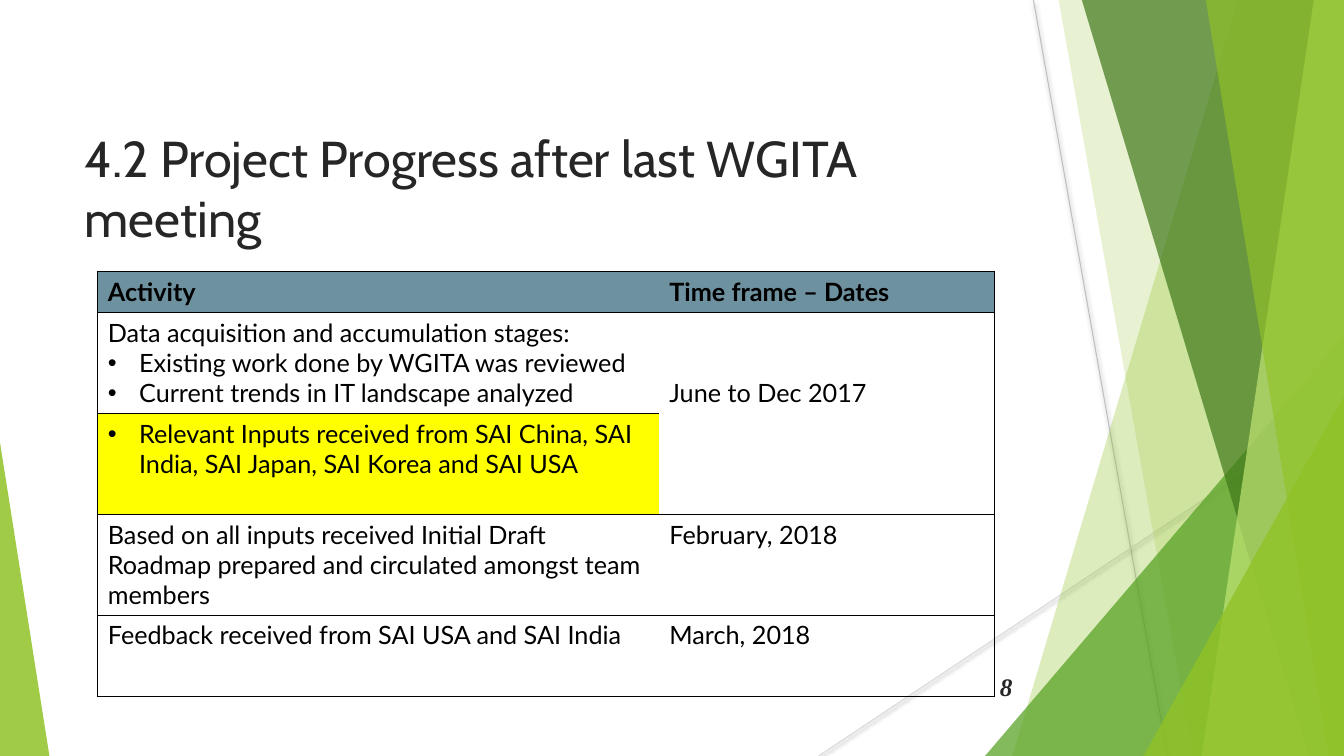
from dataclasses import dataclass
from typing import Optional

from lxml import etree
from pptx import Presentation
from pptx.dml.color import RGBColor
from pptx.enum.shapes import MSO_CONNECTOR, MSO_SHAPE
from pptx.enum.text import MSO_ANCHOR, PP_ALIGN
from pptx.oxml.ns import qn
from pptx.util import Inches, Pt

WIDTH, HEIGHT = 13.33, 7.5
INK, BLACK, WHITE = "262626", "000000", "FFFFFF"
HEADER, HIGHLIGHT = "6E91A0", "FFFF00"
LIME, GREEN, FOREST, PALE = "90C226", "54A021", "3F7819", "C0E474"


@dataclass
class Ray:
    start: tuple[float, float]
    end: tuple[float, float]
    color: str


@dataclass
class Band:
    """A facet running from the slide's top to its bottom at the right edge."""
    top_left: float
    bottom_left: float
    color: str
    opacity: int


@dataclass
class Wedge:
    left: float
    top: float
    width: float
    apex: float
    color: str
    opacity: int


@dataclass
class Entry:
    lines: list[str]
    fill: Optional[str] = None
    borders: str = "LTB"
    bold: bool = False
    top_margin: float = 0.05


RAYS = [
    Ray((10.25, 0), (11.58, HEIGHT), "BFBFBF"),
    Ray((WIDTH, 4.03), (8.12, HEIGHT), "D9D9D9"),
]
FACETS = [
    Band(12.28, 10.04, LIME, 30),
    Band(10.5, 11.83, LIME, 20),
    Wedge(9.77, 3.33, 3.56, 1, GREEN, 72),
    Band(10.73, 12.98, FOREST, 70),
    Band(13.03, 11.92, PALE, 70),
    Band(11.96, 13.18, LIME, 65),
    Wedge(11.34, 3.93, 1.99, 1, LIME, 80),
    Wedge(0, 4.39, 0.49, 0, LIME, 85),
]

# Lines that begin with a bullet sign become bulleted paragraphs
ACTIVITIES = [
    Entry(["Activity"], HEADER, bold=True),
    Entry(["Data acquisition and accumulation stages:",
           "•Existing work done by WGITA was reviewed",
           "•Current trends in IT landscape analyzed"]),
    Entry(["•Relevant Inputs received from SAI China, SAI India, "
           "SAI Japan, SAI Korea and SAI USA"], HIGHLIGHT),
    Entry(["Based on all inputs received Initial Draft Roadmap prepared "
           "and circulated amongst team members"], WHITE),
    Entry(["Feedback received from SAI USA and SAI India"], WHITE),
]
DATES = [
    Entry(["Time frame – Dates"], HEADER, "RTB", bold=True),
    Entry(["June to Dec 2017"], borders="RTB", top_margin=0.65),
    Entry([], borders="RB"),
    Entry(["February, 2018"], borders="RTB"),
    Entry(["March, 2018"], borders="RTB"),
]
COLUMN_WIDTHS = [5.57, 3.32]
ROW_HEIGHTS = [0.41, 1, 1, 1, 0.81]


def rgb(color: str) -> RGBColor:
    return RGBColor.from_string(color)


def set_font(para, name: str, size: float, color: str, bold=False, italic=False) -> None:
    font = para.font
    font.name, font.size, font.bold, font.italic = name, Pt(size), bold, italic
    font.color.rgb = rgb(color)


def draw_ray(slide, ray: Ray) -> None:
    line = slide.shapes.add_connector(
        MSO_CONNECTOR.STRAIGHT, *map(Inches, ray.start + ray.end))
    line.line.color.rgb = rgb(ray.color)
    line.line.width = Pt(0.75)
    effects = etree.SubElement(line.element.spPr, qn("a:effectLst"))
    shadow = etree.SubElement(
        effects, qn("a:outerShdw"), blurRad=str(Pt(3.1)), dist=str(Pt(1.6)),
        dir="5400000", rotWithShape="0")
    shade = etree.SubElement(shadow, qn("a:srgbClr"), val=BLACK)
    etree.SubElement(shade, qn("a:alpha"), val="38000")


def draw_facet(slide, facet: Band | Wedge) -> None:
    if isinstance(facet, Band):
        builder = slide.shapes.build_freeform(
            Inches(facet.top_left), Inches(0), scale=1.0)
        corners = [(WIDTH, 0), (WIDTH, HEIGHT), (facet.bottom_left, HEIGHT)]
        builder.add_line_segments([(Inches(x), Inches(y)) for x, y in corners])
        shape = builder.convert_to_shape()
    else:
        shape = slide.shapes.add_shape(
            MSO_SHAPE.ISOSCELES_TRIANGLE, Inches(facet.left), Inches(facet.top),
            Inches(facet.width), Inches(HEIGHT - facet.top))
        shape.adjustments[0] = facet.apex
    shape.shadow.inherit = False
    shape.line.fill.background()
    shape.fill.solid()
    shape.fill.fore_color.rgb = rgb(facet.color)
    tint = shape.element.spPr.find(qn("a:solidFill")).find(qn("a:srgbClr"))
    etree.SubElement(tint, qn("a:alpha"), val=str(facet.opacity * 1000))


def add_bullet(para) -> None:
    props = para._p.get_or_add_pPr()
    props.set("marL", str(Inches(0.31)))
    props.set("indent", str(Inches(-0.31)))
    etree.SubElement(props, qn("a:buFont"), typeface="Arial")
    etree.SubElement(props, qn("a:buChar"), char="•")


def set_borders(cell, sides: str) -> None:
    props = cell._tc.get_or_add_tcPr()
    for index, side in enumerate("LRTB"):
        border = etree.Element(qn(f"a:ln{side}"), w=str(Pt(0.75)))
        props.insert(index, border)
        if side in sides:
            paint = etree.SubElement(border, qn("a:solidFill"))
            etree.SubElement(paint, qn("a:srgbClr"), val=BLACK)
        else:
            etree.SubElement(border, qn("a:noFill"))


def fill_cell(cell, entry: Entry) -> None:
    if entry.fill:
        cell.fill.solid()
        cell.fill.fore_color.rgb = rgb(entry.fill)
    else:
        cell.fill.background()
    set_borders(cell, entry.borders)
    cell.margin_top = Inches(entry.top_margin)
    frame = cell.text_frame
    for index, line in enumerate(entry.lines):
        para = frame.add_paragraph() if index else frame.paragraphs[0]
        para.text = line.removeprefix("•")
        if line.startswith("•"):
            add_bullet(para)
        set_font(para, "Lato", 18, BLACK, entry.bold)


def add_schedule(slide) -> None:
    table = slide.shapes.add_table(
        len(ROW_HEIGHTS), len(COLUMN_WIDTHS), Inches(0.97), Inches(2.69),
        Inches(sum(COLUMN_WIDTHS)), Inches(sum(ROW_HEIGHTS))).table
    table.first_row = table.horz_banding = False
    for column, width in zip(table.columns, COLUMN_WIDTHS):
        column.width = Inches(width)
    for row, height in zip(table.rows, ROW_HEIGHTS):
        row.height = Inches(height)
    table.cell(1, 1).merge(table.cell(2, 1))
    for column, entries in enumerate((ACTIVITIES, DATES)):
        for row, entry in enumerate(entries):
            fill_cell(table.cell(row, column), entry)


def main() -> None:
    deck = Presentation()
    deck.slide_width, deck.slide_height = Inches(WIDTH), Inches(HEIGHT)
    slide = deck.slides.add_slide(deck.slide_layouts[5])

    # Backdrop
    for ray in RAYS:
        draw_ray(slide, ray)
    for facet in FACETS:
        draw_facet(slide, facet)

    # Title, in front of the backdrop
    title = slide.shapes.title
    title.element.getparent().append(title.element)
    title.left, title.top = Inches(0.74), Inches(1.21)
    title.width, title.height = Inches(9.4), Inches(1.44)
    title.text_frame.text = "4.2 Project Progress after last WGITA meeting"
    title.text_frame.vertical_anchor = MSO_ANCHOR.TOP
    heading = title.text_frame.paragraphs[0]
    heading.alignment = PP_ALIGN.LEFT
    set_font(heading, "Cabin", 36, INK)

    # Page number
    box = slide.shapes.add_textbox(Inches(9.39), Inches(6.61), Inches(0.75), Inches(0.4))
    box.text_frame.word_wrap = True
    box.text_frame.vertical_anchor = MSO_ANCHOR.MIDDLE
    number = box.text_frame.paragraphs[0]
    number.text = "8"
    number.alignment = PP_ALIGN.RIGHT
    set_font(number, "Times New Roman", 18, INK, bold=True, italic=True)

    add_schedule(slide)
    deck.save("out.pptx")


if __name__ == "__main__":
    main()
